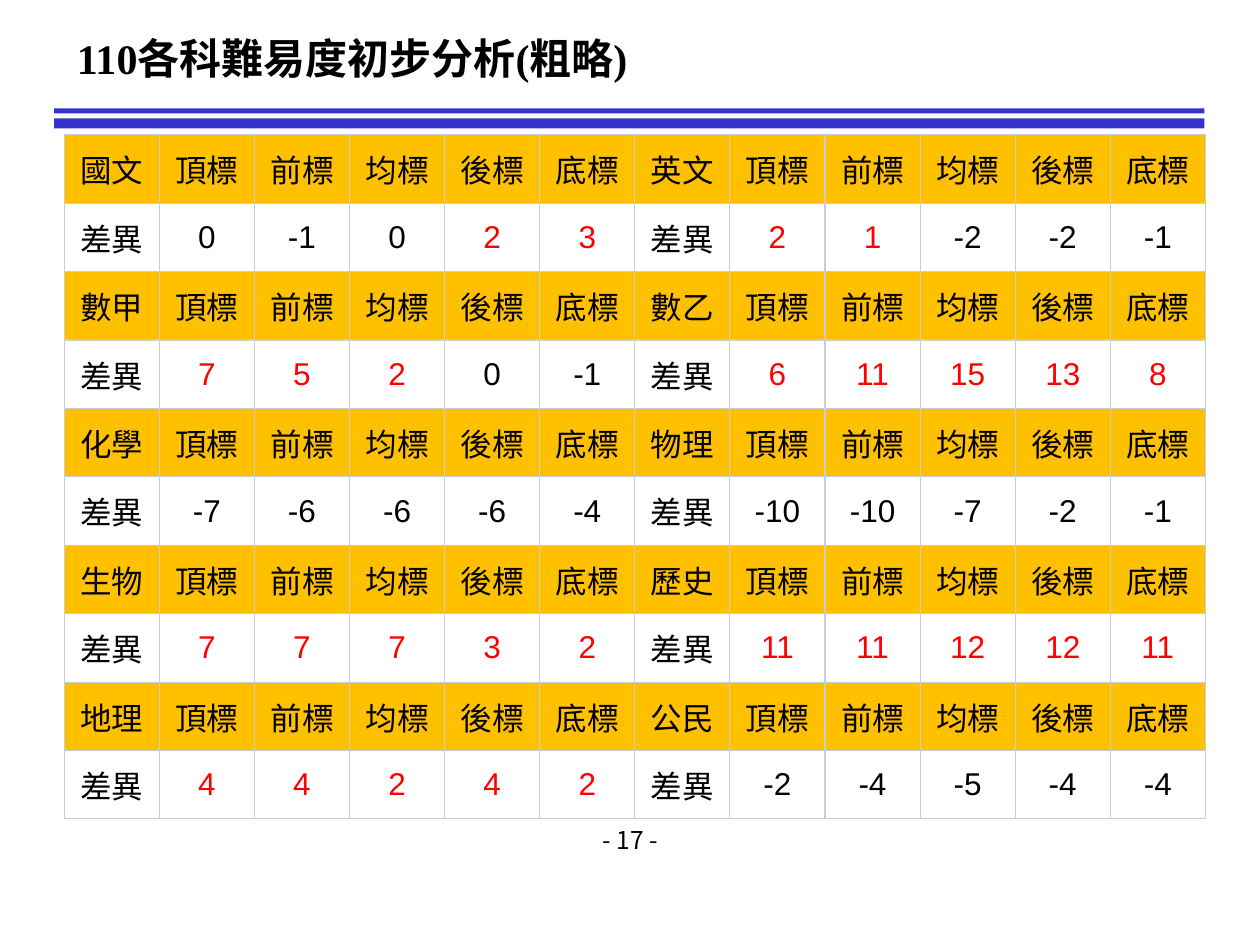
"""Build the slide comparing the difficulty of each subject in year 110."""
import lxml.etree
import pptx
import pptx.dml.color
import pptx.enum.shapes
import pptx.enum.text
import pptx.oxml.ns
import pptx.util

COLOURS = {"rule": "3333CC", "header": "FFC000", "border": "CCCCCC",
           "text": "000000", "harder": "FF0000"}
CJK_FONT = "Noto Sans CJK JP"
LEVELS = ["頂標", "前標", "均標", "後標", "底標"]
SUBJECT_PAIRS = [
    [("國文", [0, -1, 0, 2, 3]), ("英文", [2, 1, -2, -2, -1])],
    [("數甲", [7, 5, 2, 0, -1]), ("數乙", [6, 11, 15, 13, 8])],
    [("化學", [-7, -6, -6, -6, -4]), ("物理", [-10, -10, -7, -2, -1])],
    [("生物", [7, 7, 7, 3, 2]), ("歷史", [11, 11, 12, 12, 11])],
    [("地理", [4, 4, 2, 4, 2]), ("公民", [-2, -4, -5, -4, -4])],
]
Inches = pptx.util.Inches
qn = pptx.oxml.ns.qn


def add_run(paragraph, text, size, font, colour="text", bold=False):
    run = paragraph.add_run()
    run.text = text
    run.font.size = pptx.util.Pt(size)
    run.font.name = font
    run.font.bold = bold
    run.font.color.rgb = pptx.dml.color.RGBColor.from_string(COLOURS[colour])
    latin = run.font._element.find(qn("a:latin"))
    east_asian = lxml.etree.Element(qn("a:ea"), typeface=CJK_FONT)
    latin.addnext(east_asian)
    return run


def add_borders(cell):
    properties = cell._tc.get_or_add_tcPr()
    for side in ("a:lnL", "a:lnR", "a:lnT", "a:lnB"):
        line = lxml.etree.SubElement(properties, qn(side), w=str(pptx.util.Pt(0.75)))
        fill = lxml.etree.SubElement(line, qn("a:solidFill"))
        lxml.etree.SubElement(fill, qn("a:srgbClr"), val=COLOURS["border"])


deck = pptx.Presentation()
deck.slide_width, deck.slide_height = Inches(10), Inches(7.5)
slide = deck.slides.add_slide(deck.slide_layouts[5])

title = slide.shapes.title
title.left, title.top = Inches(0.51), Inches(0.21)
title.width, title.height = Inches(6.42), Inches(0.5)
title.text_frame.vertical_anchor = pptx.enum.text.MSO_ANCHOR.TOP
heading = title.text_frame.paragraphs[0]
heading.alignment = pptx.enum.text.PP_ALIGN.LEFT
for text, spacing in [("110各科難易度", 0), ("初", -10), ("步分析(粗略)", 0)]:
    part = add_run(heading, text, 24, "Times New Roman", bold=True)
    part.font._element.set("spc", str(spacing))

for top, height in [(0.86, 0.04), (0.94, 0.08)]:
    rule = slide.shapes.add_shape(
        pptx.enum.shapes.MSO_SHAPE.RECTANGLE,
        Inches(0.43), Inches(top), Inches(9.13), Inches(height))
    rule.shadow.inherit = False
    rule.fill.solid()
    rule.fill.fore_color.rgb = pptx.dml.color.RGBColor.from_string(COLOURS["rule"])
    rule.line.fill.background()

page_number = slide.shapes.add_textbox(
    Inches(3.42), Inches(6.5), Inches(3.17), Inches(0.5)).text_frame
page_number.word_wrap = True
page_number.paragraphs[0].alignment = pptx.enum.text.PP_ALIGN.CENTER
add_run(page_number.paragraphs[0], "- 17 -", 14, CJK_FONT)

rows = []
for pair in SUBJECT_PAIRS:
    rows.append([entry for subject, _ in pair for entry in [subject, *LEVELS]])
    rows.append([entry for _, changes in pair for entry in ["差異", *changes]])

scores = slide.shapes.add_table(
    len(rows), len(rows[0]),
    Inches(0.51), Inches(1.07), Inches(9.06), Inches(5.43)).table
scores.first_row = scores.horz_banding = False
for row_index, row in enumerate(rows):
    for column_index, entry in enumerate(row):
        cell = scores.cell(row_index, column_index)
        cell.margin_left = cell.margin_right = Inches(0.05)
        cell.margin_top = cell.margin_bottom = Inches(0.05)
        cell.vertical_anchor = pptx.enum.text.MSO_ANCHOR.MIDDLE
        add_borders(cell)
        if row_index % 2 == 0:
            cell.fill.solid()
            cell.fill.fore_color.rgb = pptx.dml.color.RGBColor.from_string(COLOURS["header"])
        else:
            cell.fill.background()
        paragraph = cell.text_frame.paragraphs[0]
        paragraph.alignment = pptx.enum.text.PP_ALIGN.CENTER
        positive = isinstance(entry, int) and entry > 0
        add_run(paragraph, str(entry), 18, "Arial", "harder" if positive else "text")

deck.save("out.pptx")
